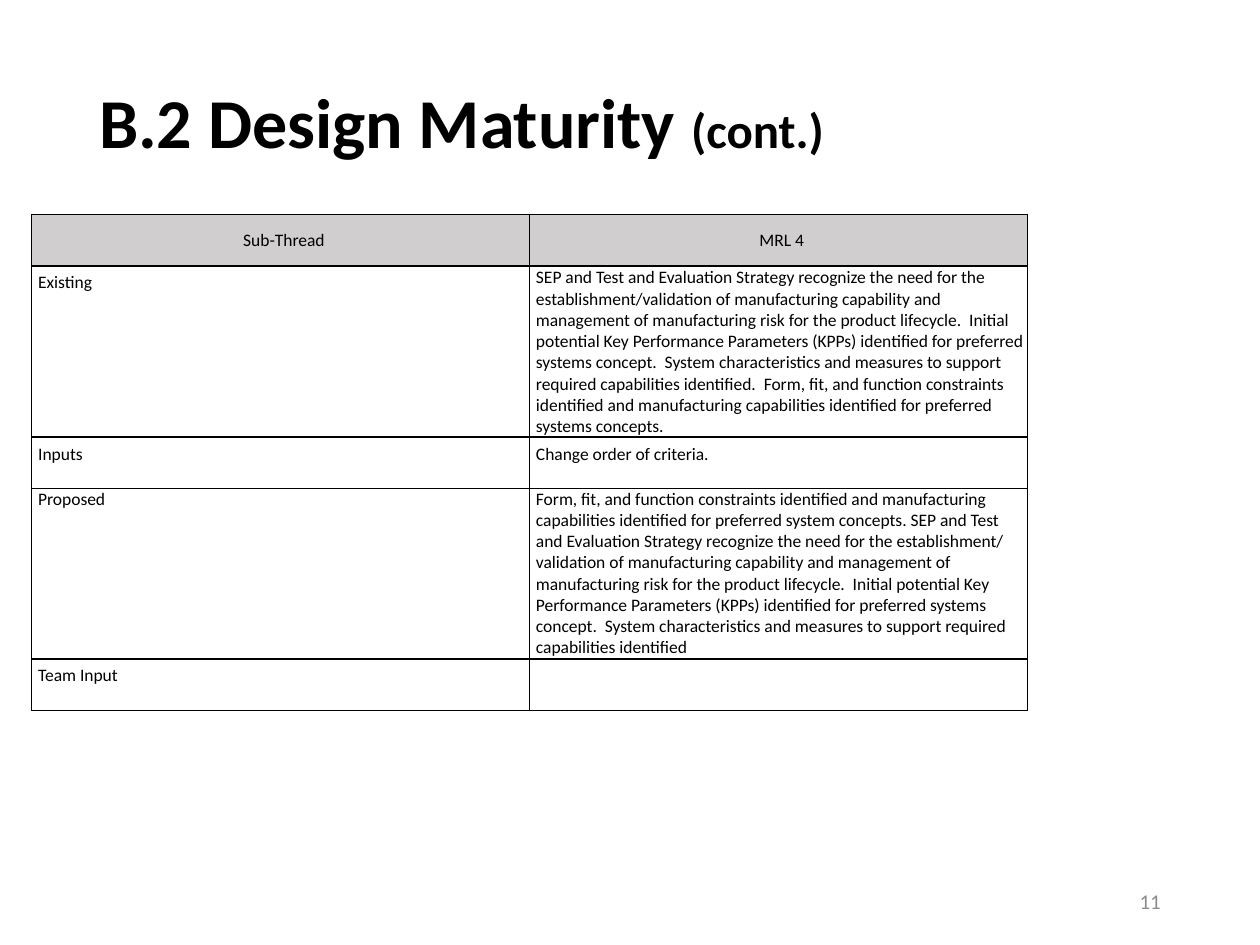
from lxml import etree
from pptx import Presentation
from pptx.dml.color import RGBColor
from pptx.enum.text import MSO_ANCHOR, PP_ALIGN
from pptx.oxml.ns import qn
from pptx.util import Cm, Pt

MIDDLE, TOP = MSO_ANCHOR.MIDDLE, MSO_ANCHOR.TOP
LEFT, CENTER, RIGHT = PP_ALIGN.LEFT, PP_ALIGN.CENTER, PP_ALIGN.RIGHT
FONT = "Calibri"
BLACK, GREY, HEADER_FILL = "000000", "8C8C8C", "D0CECE"

# Cell margins in cm: left, top, right, bottom
FLUSH = (0.13, 0, 0, 0)
PADDED = (0.13, 0.13, 0.25, 0.13)
TIGHT = (0.13, 0.03, 0.03, 0)

EXISTING = (
    "SEP and Test and Evaluation Strategy recognize the need for the "
    "establishment/validation of manufacturing capability and management of "
    "manufacturing risk for the product lifecycle.  Initial potential Key "
    "Performance Parameters (KPPs) identified for preferred systems concept.  "
    "System characteristics and measures to support required capabilities "
    "identified.  Form, fit, and function constraints identified and "
    "manufacturing capabilities identified for preferred systems concepts."
)
PROPOSED = (
    "Form, fit, and function constraints identified and manufacturing "
    "capabilities identified for preferred system concepts. SEP and Test and "
    "Evaluation Strategy recognize the need for the establishment/ validation "
    "of manufacturing capability and management of manufacturing risk for the "
    "product lifecycle.  Initial potential Key Performance Parameters (KPPs) "
    "identified for preferred systems concept.  System characteristics and "
    "measures to support required capabilities identified"
)
# Row height in cm, then text and margins of each cell
ROWS = [
    (1.04, ("Sub-Thread", FLUSH), ("MRL 4", FLUSH)),
    (3.45, ("Existing", PADDED), (EXISTING, TIGHT)),
    (1.04, ("Inputs", PADDED), ("Change order of criteria.", PADDED)),
    (3.43, ("Proposed", FLUSH), (PROPOSED, FLUSH)),
    (1.04, ("Team Input", PADDED), ("", PADDED)),
]


def rgb(value):
    return RGBColor.from_string(value)


def add_run(p, text, size, color=BLACK, bold=False):
    r = p.add_run()
    r.text = text
    r.font.name = FONT
    r.font.size = Pt(size)
    r.font.bold = bold
    r.font.color.rgb = rgb(color)


def add_text(s, box, runs, align=LEFT, spacing=1.0):
    """Add one middle-anchored paragraph; runs are add_run arguments."""
    tf = s.shapes.add_textbox(*map(Cm, box)).text_frame
    tf.word_wrap = True
    tf.vertical_anchor = MIDDLE
    p = tf.paragraphs[0]
    p.alignment = align
    p.line_spacing = spacing
    for run in runs:
        add_run(p, *run)


def set_borders(cell):
    tc_pr = cell._tc.get_or_add_tcPr()
    for i, side in enumerate(("a:lnL", "a:lnR", "a:lnT", "a:lnB")):
        ln = etree.Element(qn(side), w=str(Pt(1)))
        fill = etree.SubElement(ln, qn("a:solidFill"))
        etree.SubElement(fill, qn("a:srgbClr"), val=BLACK)
        tc_pr.insert(i, ln)


def fill_cell(cell, text, margins, header):
    (cell.margin_left, cell.margin_top,
     cell.margin_right, cell.margin_bottom) = map(Cm, margins)
    cell.vertical_anchor = MIDDLE if header else TOP
    p = cell.text_frame.paragraphs[0]
    p.alignment = CENTER if header else LEFT
    if text:
        add_run(p, text, 10)
    if header:
        cell.fill.solid()
        cell.fill.fore_color.rgb = rgb(HEADER_FILL)
    else:
        cell.fill.background()
    set_borders(cell)


def add_criteria_table(s, left, top, width):
    height = sum(row[0] for row in ROWS)
    box = map(Cm, (left, top, width, height))
    table = s.shapes.add_table(len(ROWS), 2, *box).table
    table.first_row = table.horz_banding = False
    for column in table.columns:
        column.width = Cm(width / 2)
    for i, (row_height, *cells) in enumerate(ROWS):
        table.rows[i].height = Cm(row_height)
        for j, (text, margins) in enumerate(cells):
            fill_cell(table.cell(i, j), text, margins, header=i == 0)


def main():
    prs = Presentation()
    prs.slide_width, prs.slide_height = Cm(25.4), Cm(19.05)
    s = prs.slides.add_slide(prs.slide_layouts[6])
    title = [("B.2 Design Maturity ", 40, BLACK, True),
             ("(cont.)", 28, BLACK, True)]
    add_text(s, (1.75, 1.02, 21.9, 3.05), title, spacing=0.9)
    add_criteria_table(s, 0.64, 4.32, 20.07)
    add_text(s, (17.93, 17.65, 5.72, 1.02), [("11", 12, GREY)], align=RIGHT)
    prs.save("out.pptx")


if __name__ == "__main__":
    main()
